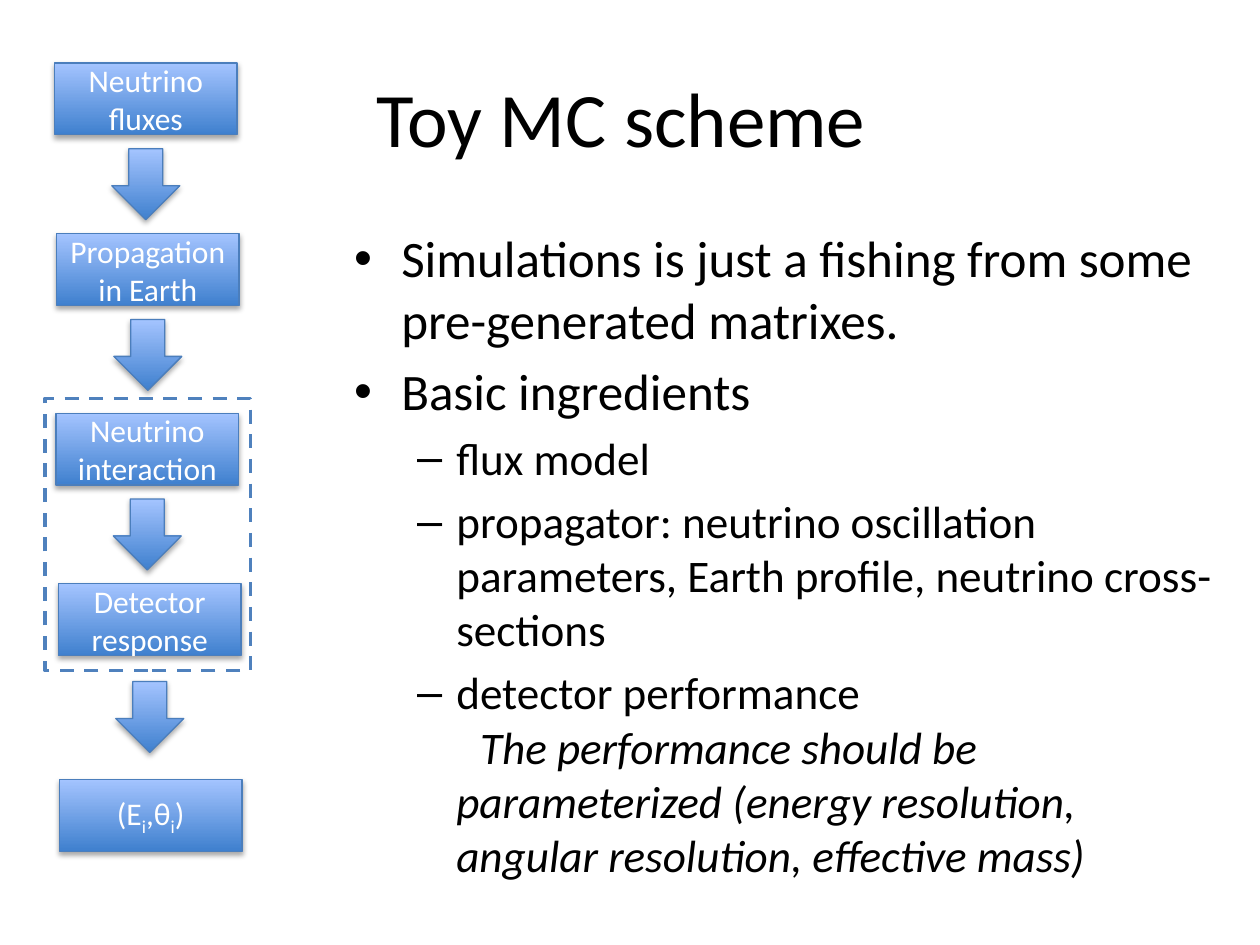
from lxml import etree
from pptx import Presentation
from pptx import util as u
from pptx.dml.color import RGBColor
from pptx.enum import dml, shapes, text
from pptx.oxml import parse_xml
from pptx.oxml.ns import nsdecls, qn

BLACK = RGBColor(0x00, 0x00, 0x00)
WHITE = RGBColor(0xFF, 0xFF, 0xFF)
DARK = RGBColor(0x3F, 0x80, 0xCE)
LIGHT = RGBColor(0xA4, 0xC4, 0xFF)
EDGE = RGBColor(0x4B, 0x7E, 0xBC)
DASH = RGBColor(0x4F, 0x81, 0xBD)

# A run is (words, style); style is "", "italic" or "sub".
TITLE = [("Toy MC scheme ", "")]
# Level and runs of each bullet
BODY = [
    (0, [("Simulations is just a fishing from some pre-generated matrixes.", "")]),
    (0, [("Basic ingredients", "")]),
    (1, [("flux model", "")]),
    (1, [("propagator: neutrino oscillation parameters, Earth profile, "
          "neutrino cross-sections", "")]),
    (1, [("detector performance\n\t", ""),
         ("The performance should be parameterized (energy resolution, "
          "angular resolution, effective mass)", "italic")]),
]
# Mark, size in points, left margin and hanging indent in cm
LEVELS = [("•", 29.2, 0.95, 0.95), ("–", 25.8, 2.06, 0.79)]

# Left, top, runs, gap down to the arrow (None for the last step), in cm
STEPS = [
    (1.1, 1.27, [("Neutrino fluxes", "")], 0.28),
    (1.14, 4.71, [("Propagation in Earth", "")], 0.28),
    (1.13, 8.33, [("Neutrino interaction", "")], 0.28),
    (1.18, 11.77, [("Detector response", "")], 0.52),
    (1.2, 15.71, [("(E", ""), ("i", "sub"), (",θ", ""), ("i", "sub"), (")", "")], None),
]
BOX_W, BOX_H = 3.68, 1.45
ARROW_W, ARROW_H = 1.37, 1.43


def write(para, runs, size, color=BLACK, align=None):
    para.alignment = align
    for words, style in runs:
        for i, line in enumerate(words.split("\n")):
            if i:
                para.add_line_break()
            run = para.add_run()
            run.text = line
            font = run.font
            font.name, font.size = "Calibri", u.Pt(size)
            font.color.rgb = color
            if style == "italic":
                font.italic = True
            elif style == "sub":
                run._r.get_or_add_rPr().set("baseline", "-25000")
    for mark in para._p.findall(qn("a:br")):
        etree.SubElement(mark, qn("a:rPr")).set("sz", str(round(size * 100)))


def bullet(para, mark, left, hang):
    props = para._p.get_or_add_pPr()
    props.set("marL", str(u.Cm(left)))
    props.set("indent", str(-u.Cm(hang)))
    space = etree.SubElement(props, qn("a:spcBef"))
    etree.SubElement(space, qn("a:spcPct")).set("val", "20000")
    etree.SubElement(props, qn("a:buFont")).set("typeface", "Arial")
    etree.SubElement(props, qn("a:buChar")).set("char", mark)


def frame(slide, left, top, width, height, anchor):
    box = slide.shapes.add_textbox(u.Cm(left), u.Cm(top), u.Cm(width), u.Cm(height))
    box.text_frame.word_wrap = True
    box.text_frame.vertical_anchor = anchor
    return box.text_frame


def block(slide, kind, left, top, width, height):
    """Add a glossy blue shape with a soft shadow below."""
    shape = slide.shapes.add_shape(kind, u.Cm(left), u.Cm(top), u.Cm(width), u.Cm(height))
    shape.fill.gradient()
    shape.fill.gradient_angle = 90
    for stop, color in zip(shape.fill.gradient_stops, (DARK, LIGHT)):
        stop.color.rgb = color
    shape.line.color.rgb = EDGE
    shape.line.width = u.Pt(0.75)
    shape.shadow.inherit = False
    shape._element.spPr.find(qn("a:effectLst")).append(parse_xml(
        f'<a:outerShdw {nsdecls("a")} blurRad="40000" dist="23000" dir="5400000" '
        'rotWithShape="0"><a:srgbClr val="000000"><a:alpha val="35000"/>'
        '</a:srgbClr></a:outerShdw>'))
    return shape


def main():
    deck = Presentation()
    deck.slide_width, deck.slide_height = u.Cm(25.4), u.Cm(19.05)
    slide = deck.slides.add_slide(deck.slide_layouts[6])
    center, middle = text.PP_ALIGN.CENTER, text.MSO_ANCHOR.MIDDLE

    title = frame(slide, 1.27, 0.76, 22.86, 3.18, middle)
    write(title.paragraphs[0], TITLE, 44, align=center)

    body = frame(slide, 6.89, 4.45, 17.81, 12.57, text.MSO_ANCHOR.TOP)
    for i, (level, runs) in enumerate(BODY):
        para = body.add_paragraph() if i else body.paragraphs[0]
        para.level = level
        mark, size, left, hang = LEVELS[level]
        bullet(para, mark, left, hang)
        write(para, runs, size)

    for left, top, runs, gap in STEPS:
        box = block(slide, shapes.MSO_SHAPE.RECTANGLE, left, top, BOX_W, BOX_H)
        box.text_frame.word_wrap = True
        box.text_frame.vertical_anchor = middle
        write(box.text_frame.paragraphs[0], runs, 18, WHITE, center)
        if gap is not None:
            block(slide, shapes.MSO_SHAPE.DOWN_ARROW, left + (BOX_W - ARROW_W) / 2,
                  top + BOX_H + gap, ARROW_W, ARROW_H)

    group = slide.shapes.add_shape(shapes.MSO_SHAPE.RECTANGLE, u.Cm(0.91), u.Cm(8.03),
                                   u.Cm(4.14), u.Cm(5.49))
    group.fill.background()
    group.line.color.rgb = DASH
    group.line.width = u.Pt(2)
    group.line.dash_style = dml.MSO_LINE.DASH
    group.shadow.inherit = False

    deck.save("out.pptx")


if __name__ == "__main__":
    main()
